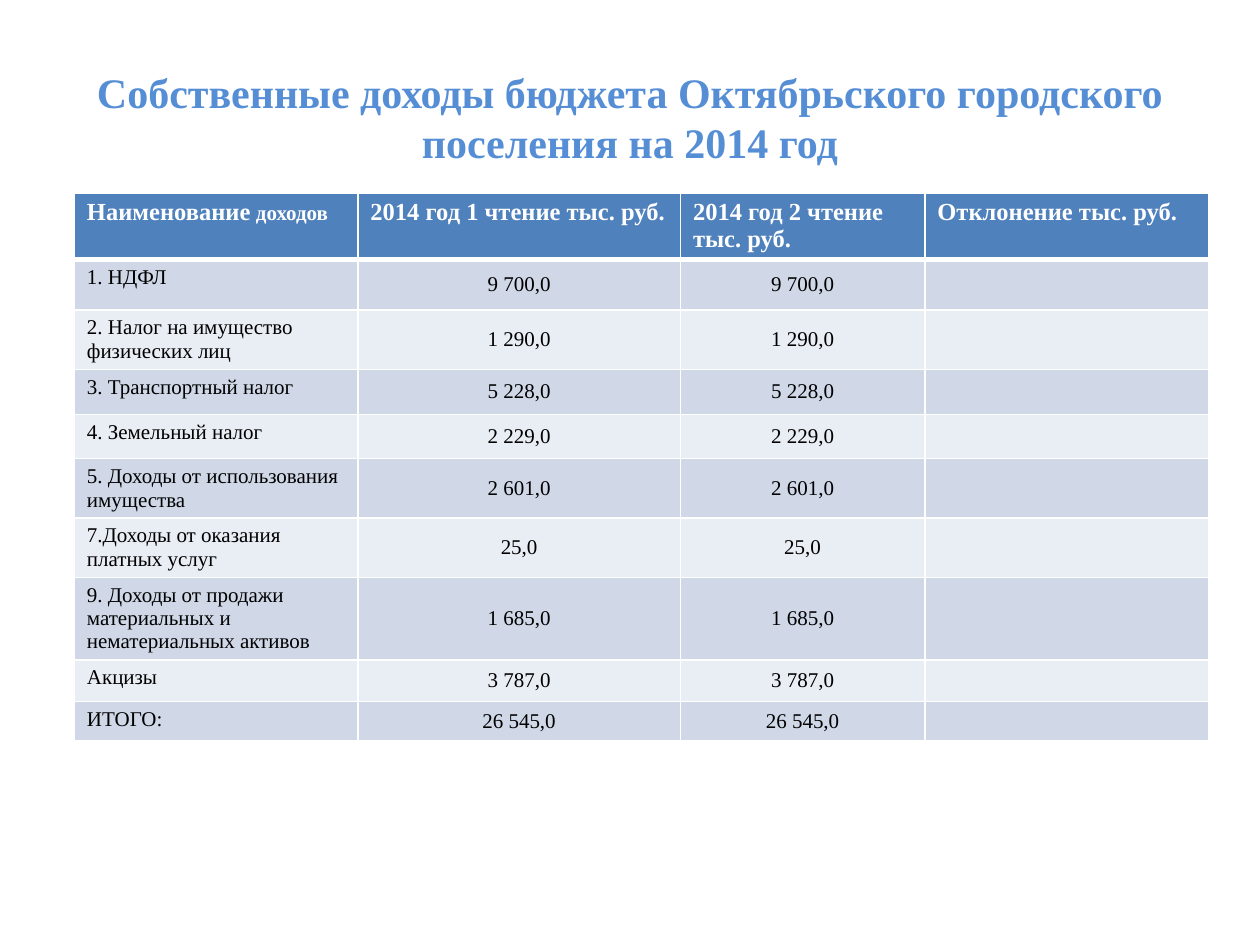
from lxml.etree import SubElement
from pptx import Presentation
from pptx.dml.color import RGBColor
from pptx.enum.text import MSO_ANCHOR, PP_ALIGN
from pptx.oxml.ns import qn
from pptx.util import Inches, Pt

FONT = "Times New Roman"
TITLE_BLUE = RGBColor(0x55, 0x8E, 0xD5)
HEADER_BLUE = RGBColor(0x4F, 0x81, 0xBD)
BANDS = (RGBColor(0xD0, 0xD8, 0xE8), RGBColor(0xE9, 0xED, 0xF4))
WHITE = RGBColor(0xFF, 0xFF, 0xFF)
BLACK = RGBColor(0, 0, 0)

TITLE = "Собственные доходы бюджета Октябрьского городского поселения на 2014 год"
HEADERS = (
    "Наименование",
    "2014 год 1 чтение тыс. руб.",
    "2014 год 2 чтение тыс. руб.",
    "Отклонение тыс. руб.",
)
INCOMES = (
    ("1. НДФЛ", "9 700,0"),
    ("2. Налог на имущество физических лиц", "1 290,0"),
    ("3. Транспортный налог", "5 228,0"),
    ("4. Земельный налог", "2 229,0"),
    ("5. Доходы от использования имущества", "2 601,0"),
    ("7.Доходы от оказания платных услуг", "25,0"),
    ("9. Доходы от продажи материальных и\nнематериальных активов", "1 685,0"),
    ("Акцизы", "3 787,0"),
    ("ИТОГО:", "26 545,0"),
)
COLUMN_WIDTHS = (2.25, 2.56, 1.94, 2.25)
ROW_HEIGHTS = (0.53, 0.4, 0.47, 0.36, 0.35, 0.47, 0.47, 0.65, 0.33, 0.31)


def format_span(span, size, color, bold):
    """Set the font of one run."""
    span.font.name = FONT
    span.font.size = Pt(size)
    span.font.color.rgb = color
    span.font.bold = bold


def add_title(page):
    """Place and format the title placeholder."""
    box = page.shapes.title
    box.left, box.top = Inches(0.5), Inches(0.3)
    box.width, box.height = Inches(9), Inches(1.25)
    box.text_frame.text = TITLE
    box.text_frame.vertical_anchor = MSO_ANCHOR.MIDDLE
    para = box.text_frame.paragraphs[0]
    para.alignment = PP_ALIGN.CENTER
    format_span(para.runs[0], 24, TITLE_BLUE, True)


def set_borders(cell, top, bottom):
    """Draw white borders of the given widths in points."""
    properties = cell._tc.get_or_add_tcPr()
    for side, width in (("L", 1), ("R", 1), ("T", top), ("B", bottom)):
        line = SubElement(properties, qn(f"a:ln{side}"), w=str(Pt(width)))
        fill = SubElement(line, qn("a:solidFill"))
        SubElement(fill, qn("a:srgbClr"), val=str(WHITE))


def fill_cell(cell, text, fill, size, color, bold):
    """Write a cell's text and paint its background."""
    cell.fill.solid()
    cell.fill.fore_color.rgb = fill
    cell.text_frame.text = text
    for para in cell.text_frame.paragraphs:
        for span in para.runs:
            format_span(span, size, color, bold)
        if not para.runs:
            SubElement(para._p, qn("a:endParaRPr"), sz=str(size * 100))


def add_header(table):
    """Fill the heading row."""
    for column, text in enumerate(HEADERS):
        cell = table.cell(0, column)
        set_borders(cell, 1, 3)
        fill_cell(cell, text, HEADER_BLUE, 14, WHITE, True)
    span = table.cell(0, 0).text_frame.paragraphs[0].add_run()
    span.text = " доходов"
    format_span(span, 12, WHITE, True)


def add_income_row(table, row, name, amount):
    """Fill one income row, with the same amount in both readings."""
    for column, text in enumerate((name, amount, amount, "")):
        cell = table.cell(row, column)
        set_borders(cell, 3 if row == 1 else 1, 1)
        fill_cell(cell, text, BANDS[(row - 1) % 2], 12, BLACK, False)
        if column in (1, 2):
            cell.vertical_anchor = MSO_ANCHOR.MIDDLE
            cell.text_frame.paragraphs[0].alignment = PP_ALIGN.CENTER


def add_income_table(page):
    """Build the table of incomes."""
    frame = page.shapes.add_table(
        len(ROW_HEIGHTS), len(COLUMN_WIDTHS),
        Inches(0.59), Inches(1.53), Inches(9), Inches(sum(ROW_HEIGHTS)),
    )
    table = frame.table
    for column, width in zip(table.columns, COLUMN_WIDTHS):
        column.width = Inches(width)
    for row, height in zip(table.rows, ROW_HEIGHTS):
        row.height = Inches(height)
    add_header(table)
    for row, (name, amount) in enumerate(INCOMES, start=1):
        add_income_row(table, row, name, amount)


def main():
    """Build the deck and save it."""
    deck = Presentation()
    deck.slide_width, deck.slide_height = Inches(10), Inches(7.5)
    page = deck.slides.add_slide(deck.slide_layouts[5])
    add_title(page)
    add_income_table(page)
    deck.save("out.pptx")


if __name__ == "__main__":
    main()
